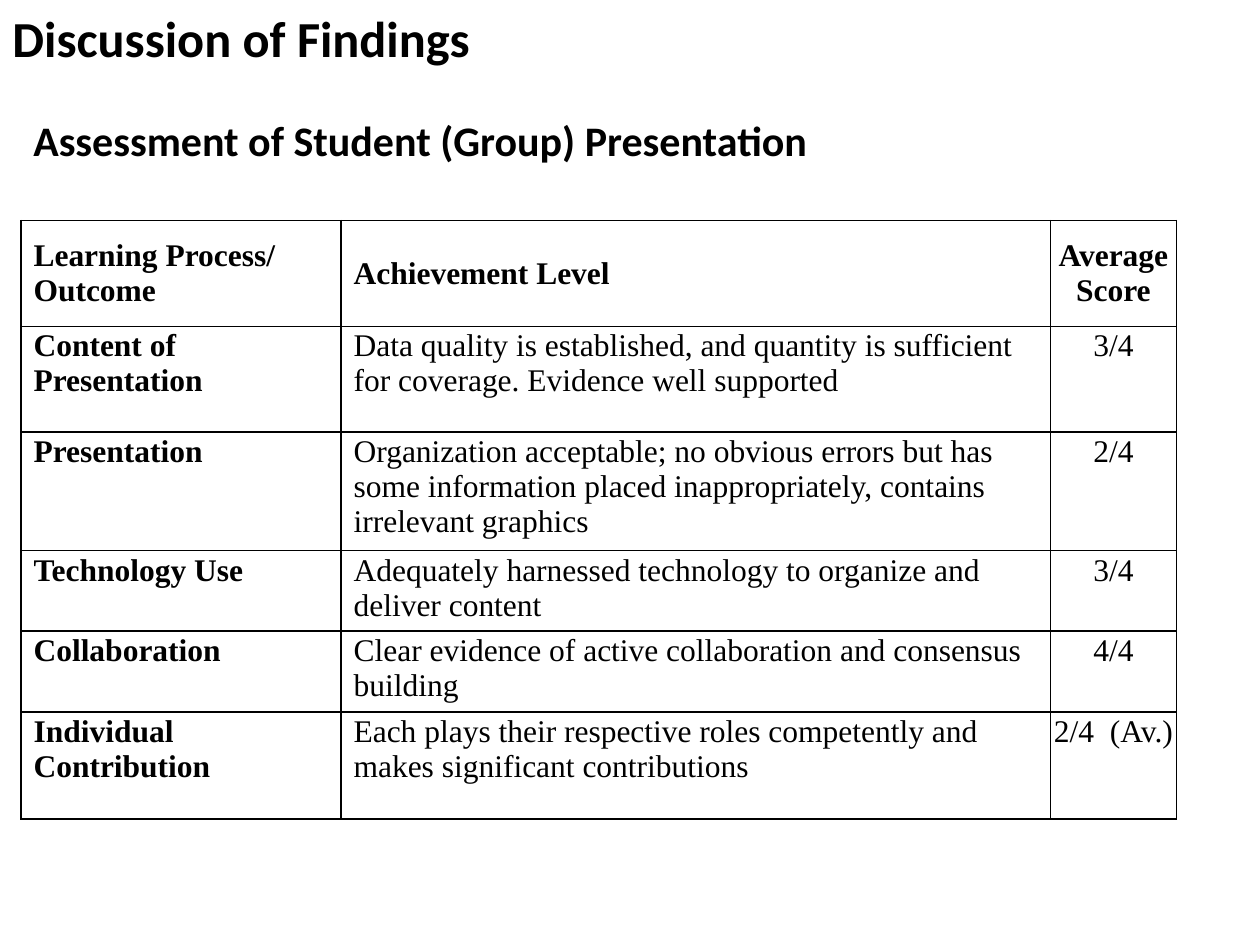
from dataclasses import dataclass

from lxml import etree
from pptx import Presentation
from pptx.dml.color import RGBColor
from pptx.enum import text
from pptx.oxml import ns
from pptx.util import Pt


@dataclass(frozen=True)
class Theme:
    ink: str = "000000"
    heading_font: str = "Calibri"
    table_font: str = "Times New Roman"
    title_size: float = 28.8
    subtitle_size: float = 24
    table_size: float = 18
    border: float = 1


THEME = Theme()
COLUMN_WIDTHS = (182.9, 405.4, 72)
ROW_HEIGHTS = (60.5, 60.5, 60.5, 40.3, 40.3, 61.2)
CELL_INDENT = 7.2
HEADER = ("Learning Process/ Outcome", "Achievement Level", "Average\nScore")
FINDINGS = (
    ("Content of Presentation",
     "Data quality is established, and quantity is sufficient for coverage. "
     "Evidence well supported", "3/4"),
    ("Presentation",
     "Organization acceptable; no obvious errors but has some information "
     "placed inappropriately, contains irrelevant graphics", "2/4"),
    ("Technology Use",
     "Adequately harnessed technology to organize and deliver content", "3/4"),
    ("Collaboration",
     "Clear evidence of active collaboration and consensus building", "4/4"),
    ("Individual Contribution",
     "Each plays their respective roles competently and makes significant "
     "contributions", "2/4  (Av.)"),
)


def write_text(frame, content, *, font, size, bold=False, centred=False, indent=0):
    """Fill a text frame, one paragraph for each line of content."""
    for index, line in enumerate(content.split("\n")):
        paragraph = frame.add_paragraph() if index else frame.paragraphs[0]
        paragraph.alignment = text.PP_ALIGN.CENTER if centred else text.PP_ALIGN.LEFT
        if indent:
            properties = paragraph._p.get_or_add_pPr()
            properties.set("marL", str(Pt(indent)))
            properties.set("indent", "0")
        run = paragraph.add_run()
        run.text = line
        run.font.name = font
        run.font.size = Pt(size)
        run.font.bold = bold
        run.font.color.rgb = RGBColor.from_string(THEME.ink)


def add_heading(slide, box, content, size, anchor):
    shape = slide.shapes.add_textbox(*(Pt(length) for length in box))
    shape.text_frame.word_wrap = True
    shape.text_frame.vertical_anchor = anchor
    write_text(shape.text_frame, content, font=THEME.heading_font, size=size, bold=True)


def add_borders(cell):
    properties = cell._tc.get_or_add_tcPr()
    for index, side in enumerate(("lnL", "lnR", "lnT", "lnB")):
        line = etree.Element(ns.qn("a:" + side), w=str(Pt(THEME.border)))
        fill = etree.SubElement(line, ns.qn("a:solidFill"))
        etree.SubElement(fill, ns.qn("a:srgbClr"), val=THEME.ink)
        properties.insert(index, line)


def add_findings_table(slide, left, top):
    rows = (HEADER, *FINDINGS)
    frame = slide.shapes.add_table(
        len(rows), len(HEADER), Pt(left), Pt(top),
        Pt(sum(COLUMN_WIDTHS)), Pt(sum(ROW_HEIGHTS)))
    table = frame.table
    table.horz_banding = False
    for column, width in zip(table.columns, COLUMN_WIDTHS):
        column.width = Pt(width)
    for row, height in zip(table.rows, ROW_HEIGHTS):
        row.height = Pt(height)

    # Cells: bold header row and first column, centred scores
    for row_index, row in enumerate(rows):
        for column_index, content in enumerate(row):
            cell = table.cell(row_index, column_index)
            is_header = row_index == 0
            is_score = column_index == len(HEADER) - 1
            cell.fill.background()
            cell.margin_left = cell.margin_right = 0
            cell.margin_top = cell.margin_bottom = Pt(1.44)
            cell.vertical_anchor = (
                text.MSO_ANCHOR.MIDDLE if is_header else text.MSO_ANCHOR.TOP)
            add_borders(cell)
            write_text(cell.text_frame, content, font=THEME.table_font,
                       size=THEME.table_size, bold=is_header or column_index == 0,
                       centred=is_score, indent=0 if is_score else CELL_INDENT)


def build_findings_slide(presentation):
    slide = presentation.slides.add_slide(presentation.slide_layouts[6])
    # Headings
    add_heading(slide, (0, 0, 718.5, 42.5), "Discussion of Findings",
                THEME.title_size, text.MSO_ANCHOR.MIDDLE)
    add_heading(slide, (12, 62, 534, 36), "Assessment of Student (Group) Presentation",
                THEME.subtitle_size, text.MSO_ANCHOR.TOP)
    # Scores by learning outcome
    add_findings_table(slide, 12, 126)


def main():
    presentation = Presentation()
    presentation.slide_width = Pt(720)
    presentation.slide_height = Pt(540)
    build_findings_slide(presentation)
    presentation.save("out.pptx")


if __name__ == "__main__":
    main()
